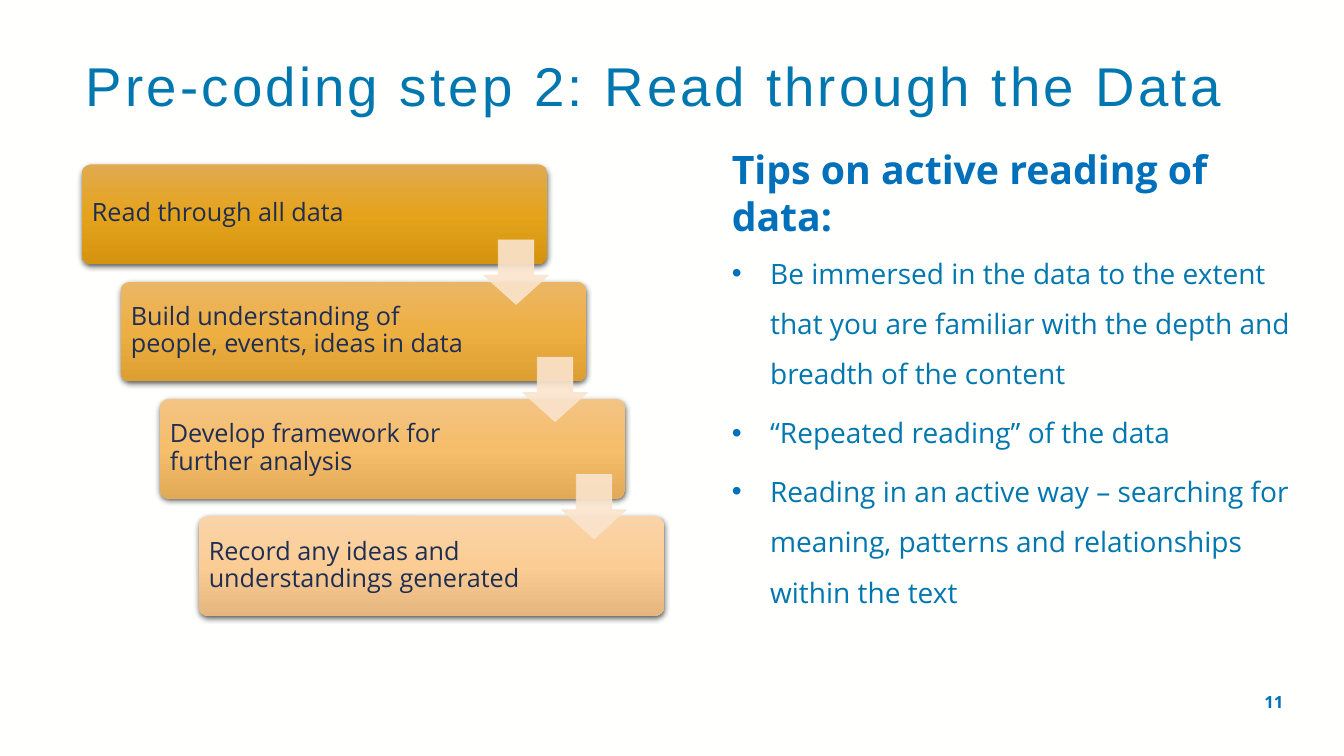
from dataclasses import dataclass

from lxml.etree import SubElement
from pptx import Presentation
from pptx.dml.color import RGBColor
from pptx.enum.shapes import MSO_SHAPE
from pptx.enum.text import MSO_ANCHOR, MSO_AUTO_SIZE, PP_ALIGN
from pptx.oxml import parse_xml
from pptx.oxml.ns import nsdecls, qn
from pptx.util import Inches, Pt

SLIDE_WIDTH, SLIDE_HEIGHT = Inches(13.33), Inches(7.5)
COLORS = {
    "background": "FFFFFE",
    "title": "0077AF",
    "accent": "0070BA",
    "step text": "1E2E53",
    "arrow": "FAE4CD",
    "shadow": "000000",
}
BODY_FONT = "Open Sans"


@dataclass(frozen=True)
class Area:
    """A rectangle in percent of the slide's width and height."""
    left: float
    top: float
    width: float
    height: float

    def shifted(self, index: int) -> "Area":
        """Move down the staircase by a number of steps."""
        return Area(self.left + 2.9 * index, self.top + 15.51 * index,
                    self.width, self.height)

    def lengths(self) -> tuple[int, int, int, int]:
        return (int(SLIDE_WIDTH * self.left / 100), int(SLIDE_HEIGHT * self.top / 100),
                int(SLIDE_WIDTH * self.width / 100), int(SLIDE_HEIGHT * self.height / 100))


@dataclass(frozen=True)
class Step:
    text: str
    gradient: tuple[str, str, str]
    text_width: float = 26.55


TITLE_AREA = Area(5.63, 3.33, 90.68, 16.8)
TIPS_AREA = Area(53.7, 18.53, 43.35, 70.4)
NUMBER_AREA = Area(87.83, 90.8, 8.4, 5.33)
STEP_AREA = Area(6.08, 21.73, 34.65, 13.2)
ARROW_AREA = Area(36, 31.73, 4.8, 8.53)

STEPS = [
    Step("Read through all data", ("E1AA51", "E5A31C", "D5940F"), 26.1),
    Step("Build understanding of people, events, ideas in data",
         ("EBB666", "EEAF42", "DD9E32")),
    Step("Develop framework for further analysis", ("F3C483", "F6BD6B", "E2A957")),
    Step("Record any ideas and understandings generated",
         ("F9D4A7", "FBCD95", "E5B77E")),
]
TIPS_HEADING = "Tips on active reading of data:"
TIPS = [
    "Be immersed in the data to the extent that you are familiar with the depth "
    "and breadth of the content",
    "“Repeated reading” of the data",
    "Reading in an active way – searching for meaning, patterns and relationships "
    "within the text",
]


def color(name: str) -> RGBColor:
    return RGBColor.from_string(COLORS[name])


def place(shape, area: Area) -> None:
    shape.left, shape.top, shape.width, shape.height = area.lengths()


def add_run(paragraph, text: str, size: float, color_name: str,
            bold: bool = False, font: str = BODY_FONT):
    run = paragraph.add_run()
    run.text = text
    run.font.size = Pt(size)
    run.font.name = font
    run.font.bold = bold
    run.font.color.rgb = color(color_name)
    return run


def add_text_box(slide, area: Area):
    text_frame = slide.shapes.add_textbox(*area.lengths()).text_frame
    text_frame.word_wrap = True
    return text_frame


def set_bullet(paragraph, indent: int) -> None:
    """Give a hanging bullet, or none when the indent is zero."""
    properties = paragraph._p.get_or_add_pPr()
    properties.set("marL", str(indent))
    properties.set("indent", str(-indent))
    if not indent:
        SubElement(properties, qn("a:buNone"))
        return
    bullet_color = SubElement(properties, qn("a:buClr"))
    SubElement(bullet_color, qn("a:srgbClr"), val=COLORS["accent"])
    SubElement(properties, qn("a:buFont"), typeface="Arial")
    SubElement(properties, qn("a:buChar"), char="•")


def set_vertical_gradient(shape, stops: tuple[str, str, str]) -> None:
    stop_xml = "".join(
        f'<a:gs pos="{index * 50000}"><a:srgbClr val="{stop}"/></a:gs>'
        for index, stop in enumerate(stops))
    gradient = parse_xml(
        f'<a:gradFill {nsdecls("a")} rotWithShape="1"><a:gsLst>{stop_xml}</a:gsLst>'
        '<a:lin ang="5400000" scaled="0"/></a:gradFill>')
    shape._element.spPr.find(qn("a:prstGeom")).addnext(gradient)


def set_soft_shadow(shape) -> None:
    effects = shape._element.spPr.find(qn("a:effectLst"))
    shadow = SubElement(effects, qn("a:outerShdw"), blurRad=str(Pt(4.5)),
                        dist=str(Pt(1.5)), dir="5400000", rotWithShape="0")
    shadow_color = SubElement(shadow, qn("a:srgbClr"), val=COLORS["shadow"])
    SubElement(shadow_color, qn("a:alpha"), val="63000")


def add_title(slide) -> None:
    title = slide.shapes.title
    place(title, TITLE_AREA)
    text_frame = title.text_frame
    text_frame.auto_size = MSO_AUTO_SIZE.NONE
    text_frame.vertical_anchor = MSO_ANCHOR.MIDDLE
    paragraph = text_frame.paragraphs[0]
    paragraph.alignment = PP_ALIGN.LEFT
    paragraph.line_spacing = 0.9
    run = add_run(paragraph, "Pre-coding step 2: Read through the Data", 39,
                  "title", font="Arial")
    run.font._element.set("spc", "230")


def add_tips(slide) -> None:
    body = slide.placeholders[1]
    place(body, TIPS_AREA)
    text_frame = body.text_frame
    text_frame.auto_size = MSO_AUTO_SIZE.NONE
    heading = text_frame.paragraphs[0]
    set_bullet(heading, 0)
    heading.space_before = Pt(0)
    add_run(heading, TIPS_HEADING, 28, "accent", bold=True)
    for tip in TIPS:
        paragraph = text_frame.add_paragraph()
        set_bullet(paragraph, Inches(0.38))
        paragraph.line_spacing = 1.5
        paragraph.space_before = Pt(0)
        paragraph.space_after = Pt(6)
        add_run(paragraph, tip, 20, "title")


def add_step(slide, step: Step, index: int) -> None:
    area = STEP_AREA.shifted(index)
    box = slide.shapes.add_shape(MSO_SHAPE.ROUNDED_RECTANGLE, *area.lengths())
    box.adjustments[0] = 0.1
    box.line.fill.background()
    box.shadow.inherit = False
    set_vertical_gradient(box, step.gradient)
    set_soft_shadow(box)

    text_frame = add_text_box(
        slide, Area(area.left + 0.23, area.top + 0.35, step.text_width, 12.4))
    text_frame.vertical_anchor = MSO_ANCHOR.MIDDLE
    text_frame.margin_left = text_frame.margin_right = Inches(0.07)
    text_frame.margin_top = text_frame.margin_bottom = Inches(0.07)
    paragraph = text_frame.paragraphs[0]
    paragraph.line_spacing = 0.9
    add_run(paragraph, step.text, 18, "step text")


def add_arrow(slide, index: int) -> None:
    arrow = slide.shapes.add_shape(MSO_SHAPE.DOWN_ARROW,
                                   *ARROW_AREA.shifted(index).lengths())
    arrow.adjustments[0], arrow.adjustments[1] = 0.55, 0.45
    arrow.shadow.inherit = False
    arrow.line.width = Pt(0.5)
    for fill in (arrow.fill, arrow.line.fill):
        fill.solid()
        fill.fore_color.rgb = color("arrow")
    for arrow_color in arrow._element.spPr.iter(qn("a:srgbClr")):
        SubElement(arrow_color, qn("a:alpha"), val="90000")


def main() -> None:
    presentation = Presentation()
    presentation.slide_width, presentation.slide_height = SLIDE_WIDTH, SLIDE_HEIGHT
    slide = presentation.slides.add_slide(presentation.slide_layouts[1])
    slide.background.fill.solid()
    slide.background.fill.fore_color.rgb = color("background")
    add_title(slide)
    add_tips(slide)
    for index, step in enumerate(STEPS):
        add_step(slide, step, index)
    for index in range(len(STEPS) - 1):
        add_arrow(slide, index)
    number = add_text_box(slide, NUMBER_AREA).paragraphs[0]
    number.alignment = PP_ALIGN.RIGHT
    add_run(number, "11", 12, "accent", bold=True)
    presentation.save("out.pptx")


if __name__ == "__main__":
    main()
